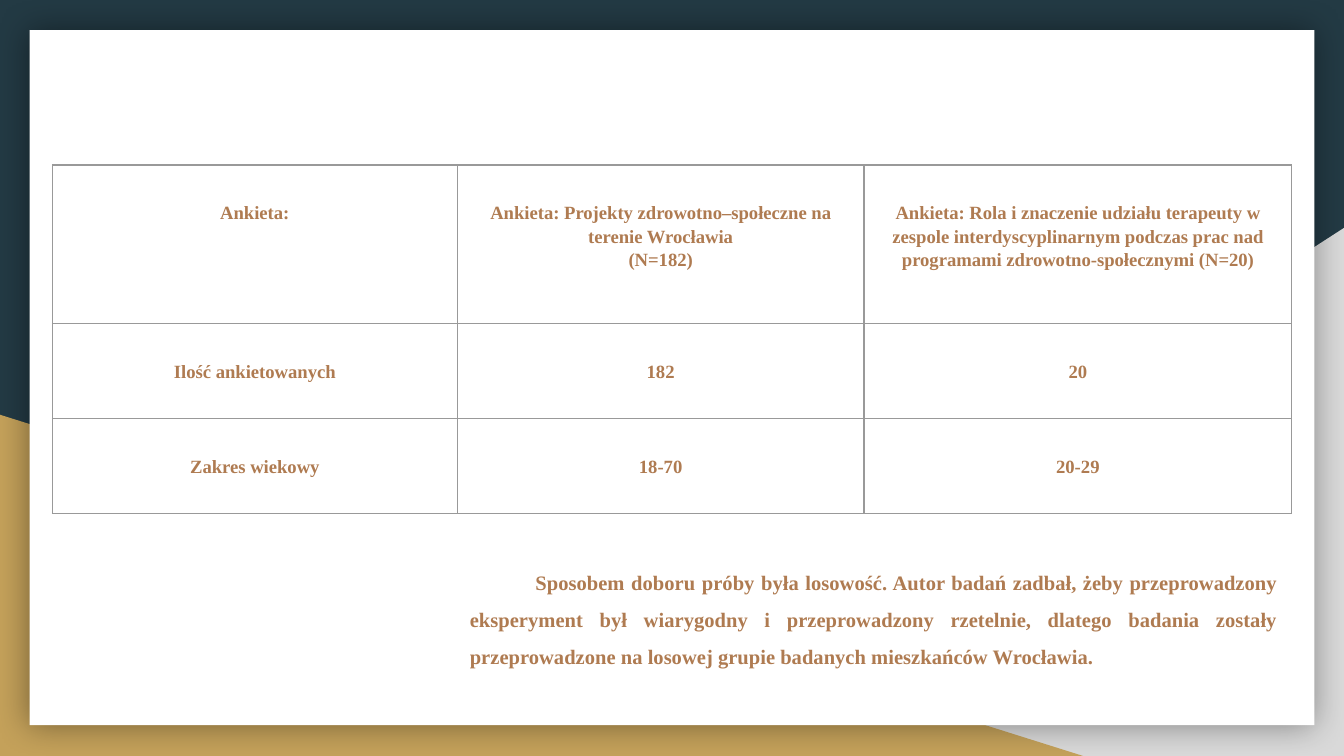
from dataclasses import dataclass

from lxml import etree
from pptx import Presentation
from pptx.dml.color import RGBColor
from pptx.enum import shapes, text
from pptx.oxml import parse_xml
from pptx.oxml.ns import nsdecls, qn
from pptx.util import Cm, Pt

COLORS = {
    "background": "233A44",
    "grey": "D9D9D9",
    "gold": "C4A15A",
    "panel": "FFFFFF",
    "border": "999999",
    "text": "AF7B51",
    "shadow": "000000",
}
FONT = "Times New Roman"
MARGIN = Cm(0.25)


@dataclass
class Backdrop:
    """A plain decorative shape; lengths are in centimetres."""
    kind: shapes.MSO_SHAPE
    left: float
    top: float
    width: float
    height: float
    color: str
    flipped: bool = False
    shadowed: bool = False


BACKDROPS = [
    Backdrop(shapes.MSO_SHAPE.RIGHT_TRIANGLE, 9.96, 4.31, 15.44, 9.98, "grey", flipped=True),
    Backdrop(shapes.MSO_SHAPE.RIGHT_TRIANGLE, 0, 7.84, 20.47, 6.45, "gold"),
    Backdrop(shapes.MSO_SHAPE.RECTANGLE, 0.56, 0.57, 24.28, 13.14, "panel", shadowed=True),
]

COLUMN_WIDTHS = [7.65, 7.69, 8.08]
ROW_HEIGHTS = [3.0, 1.79, 1.79]
ROWS = [
    ["Ankieta:",
     "Ankieta: Projekty zdrowotno–społeczne na terenie Wrocławia\n(N=182)",
     "Ankieta: Rola i znaczenie udziału terapeuty w zespole interdyscyplinarnym "
     "podczas prac nad programami zdrowotno-społecznymi (N=20)"],
    ["Ilość ankietowanych", "182", "20"],
    ["Zakres wiekowy", "18-70", "20-29"],
]
SAMPLING_NOTE = (
    "Sposobem doboru próby była losowość. Autor badań zadbał, żeby przeprowadzony "
    "eksperyment był wiarygodny i przeprowadzony rzetelnie, dlatego badania zostały "
    "przeprowadzone na losowej grupie badanych mieszkańców Wrocławia."
)


def rgb(name: str) -> RGBColor:
    return RGBColor.from_string(COLORS[name])


def write(frame, content: str, *, size: float, align, spacing: float, indent=0) -> None:
    """Fill a text frame with one formatted paragraph."""
    frame.word_wrap = True
    paragraph = frame.paragraphs[0]
    paragraph.text = content
    paragraph.alignment = align
    paragraph.line_spacing = spacing
    if indent:
        properties = paragraph._p.get_or_add_pPr()
        properties.set("marL", "0")
        properties.set("indent", str(int(indent)))
    for run in paragraph.runs:
        run.font.name = FONT
        run.font.size = Pt(size)
        run.font.bold = True
        run.font.color.rgb = rgb("text")


def add_backdrop(slide, item: Backdrop) -> None:
    shape = slide.shapes.add_shape(
        item.kind, Cm(item.left), Cm(item.top), Cm(item.width), Cm(item.height))
    shape.fill.solid()
    shape.fill.fore_color.rgb = rgb(item.color)
    shape.line.fill.background()
    shape.shadow.inherit = False
    properties = shape._element.spPr
    if item.flipped:
        properties.find(qn("a:xfrm")).set("flipH", "1")
    if item.shadowed:
        properties.find(qn("a:effectLst")).append(parse_xml(
            f'<a:outerShdw {nsdecls("a")} blurRad="{Pt(18)}" dist="0" algn="ctr" '
            f'rotWithShape="0"><a:srgbClr val="{COLORS["shadow"]}">'
            '<a:alpha val="40000"/></a:srgbClr></a:outerShdw>'))


def add_borders(cell) -> None:
    properties = cell._tc.get_or_add_tcPr()
    for position, side in enumerate(("lnL", "lnR", "lnT", "lnB")):
        line = etree.Element(qn(f"a:{side}"), w=str(Pt(0.75)))
        fill = etree.SubElement(line, qn("a:solidFill"))
        etree.SubElement(fill, qn("a:srgbClr"), val=COLORS["border"])
        properties.insert(position, line)


def add_survey_table(slide) -> None:
    frame = slide.shapes.add_table(
        len(ROWS), len(COLUMN_WIDTHS), Cm(0.99), Cm(3.12),
        Cm(sum(COLUMN_WIDTHS)), Cm(sum(ROW_HEIGHTS)))
    table = frame.table
    table.first_row = table.horz_banding = False
    for column, width in zip(table.columns, COLUMN_WIDTHS):
        column.width = Cm(width)
    for row, height, contents in zip(table.rows, ROW_HEIGHTS, ROWS):
        row.height = Cm(height)
        for cell, content in zip(row.cells, contents):
            cell.fill.background()
            cell.margin_left = cell.margin_right = cell.margin_bottom = MARGIN
            cell.margin_top = Cm(0.66)
            add_borders(cell)
            write(cell.text_frame, content, size=10,
                  align=text.PP_ALIGN.CENTER, spacing=1.15)


def add_note(slide) -> None:
    box = slide.shapes.add_textbox(Cm(8.63), Cm(10.29), Cm(15.77), Cm(2.87))
    frame = box.text_frame
    frame.margin_left = frame.margin_right = MARGIN
    frame.margin_top = frame.margin_bottom = MARGIN
    write(frame, SAMPLING_NOTE, size=11, align=text.PP_ALIGN.JUSTIFY,
          spacing=1.5, indent=Cm(1.24))


def main() -> None:
    presentation = Presentation()
    presentation.slide_width, presentation.slide_height = Cm(25.4), Cm(14.29)
    slide = presentation.slides.add_slide(presentation.slide_layouts[6])

    # Background and panel
    slide.background.fill.solid()
    slide.background.fill.fore_color.rgb = rgb("background")
    for item in BACKDROPS:
        add_backdrop(slide, item)

    # Content
    add_survey_table(slide)
    add_note(slide)
    presentation.save("out.pptx")


if __name__ == "__main__":
    main()
